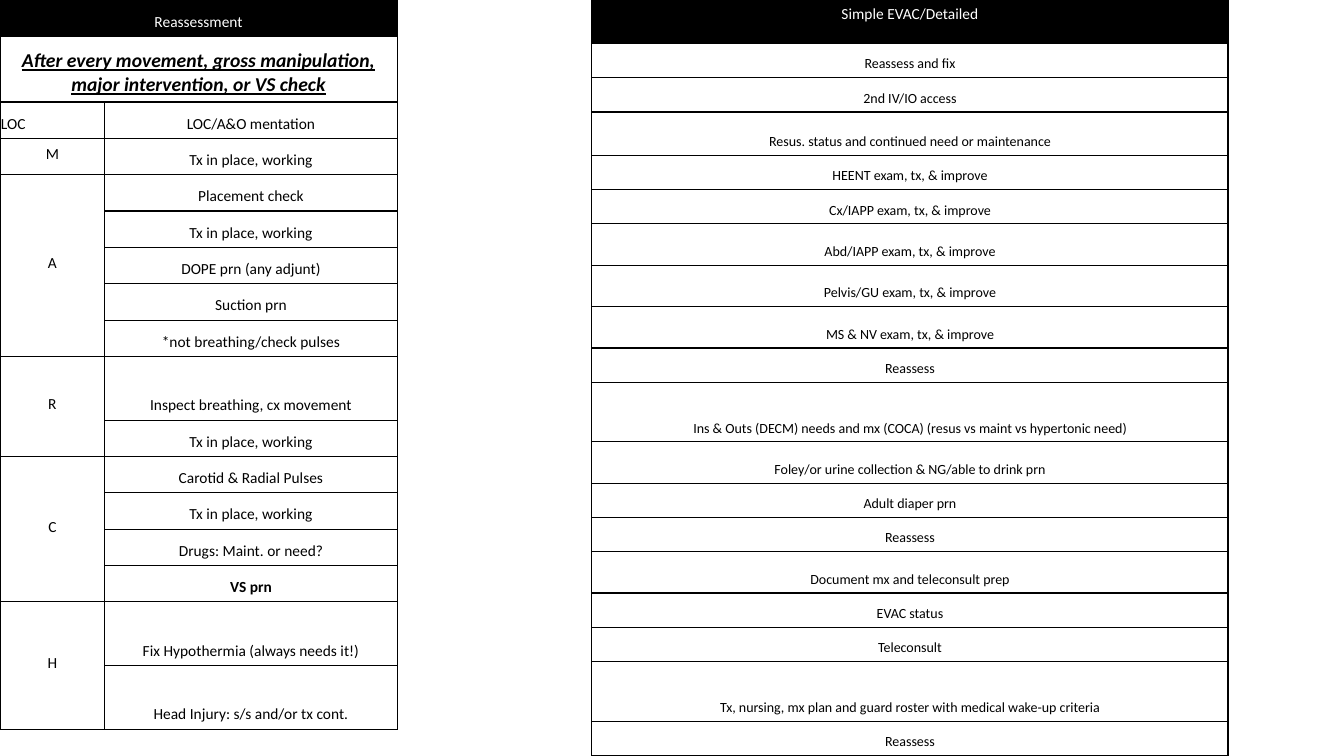
import pptx
import pptx.dml.color
import pptx.enum.text
import pptx.oxml
import pptx.oxml.ns
import pptx.util

THEME = {
    "font": "Calibri", "ink": "000000", "paper": "FFFFFF",
    "body": 11, "small": 10, "banner": 14, "border": 1,
}
ANCHOR = pptx.enum.text.MSO_ANCHOR
ALIGN = pptx.enum.text.PP_ALIGN
SLIDE_W, SLIDE_H = 13.33, 7.5

# Row heights are weights, scaled to the height of each table
ONE, BANNER, TALL = 0.36, 0.65, 0.63
reassessment = [
    (ONE, "Reassessment", ""),
    (BANNER, "After every movement, gross manipulation, major intervention, or VS check", ""),
    (ONE, "LOC", "LOC/A&O mentation"),
    (ONE, "M", "Tx in place, working"),
    (ONE, "A", "Placement check"),
    (ONE, "", "Tx in place, working"),
    (ONE, "", "DOPE prn (any adjunt)"),
    (ONE, "", "Suction prn"),
    (ONE, "", "*not breathing/check pulses"),
    (TALL, "R", "Inspect breathing, cx movement"),
    (ONE, "", "Tx in place, working"),
    (ONE, "C", "Carotid & Radial Pulses"),
    (ONE, "", "Tx in place, working"),
    (ONE, "", "Drugs: Maint. or need?"),
    (ONE, "", "VS prn"),
    (TALL, "H", "Fix Hypothermia (always needs it!)"),
    (TALL, "", "Head Injury: s/s and/or tx cont."),
]
HEAD, LOW, MID, HIGH = 0.43, 0.34, 0.41, 0.59
evacuation = [
    (HEAD, "Simple EVAC/Detailed"),
    (LOW, "Reassess and fix"),
    (LOW, "2nd IV/IO access"),
    (HEAD, "Resus. status and continued need or maintenance"),
    (LOW, "HEENT exam, tx, & improve"),
    (LOW, "Cx/IAPP exam, tx, & improve"),
    (MID, "Abd/IAPP exam, tx, & improve"),
    (MID, "Pelvis/GU exam, tx, & improve"),
    (MID, "MS & NV exam, tx, & improve"),
    (LOW, "Reassess"),
    (HIGH, "Ins & Outs (DECM) needs and mx (COCA) (resus vs maint vs hypertonic need)"),
    (MID, "Foley/or urine collection & NG/able to drink prn"),
    (LOW, "Adult diaper prn"),
    (LOW, "Reassess"),
    (MID, "Document mx and teleconsult prep"),
    (LOW, "EVAC status"),
    (LOW, "Teleconsult"),
    (HIGH, "Tx, nursing, mx plan and guard roster with medical wake-up criteria"),
    (LOW, "Reassess"),
]


def write_cell(cell, text, size=THEME["body"], color=THEME["ink"], fill=None,
               anchor=ANCHOR.BOTTOM, align=ALIGN.CENTER, insets=(0.01, 0.01, 0.01, 0.05),
               bold=False, italic=False, underline=False):
    cell.vertical_anchor = anchor
    cell.margin_left, cell.margin_top, cell.margin_right, cell.margin_bottom = map(
        pptx.util.Inches, insets)
    p = cell.text_frame.paragraphs[0]
    p.alignment = align
    r = p.runs[0] if p.runs else p.add_run()
    r.text = text
    r.font.name, r.font.size = THEME["font"], pptx.util.Pt(size)
    r.font.bold, r.font.italic, r.font.underline = bold, italic, underline
    r.font.color.rgb = pptx.dml.color.RGBColor.from_string(color)
    if fill:
        cell.fill.solid()
        cell.fill.fore_color.rgb = pptx.dml.color.RGBColor.from_string(fill)
    else:
        cell.fill.background()


def add_grid(slide, left, height, widths, weights):
    """Add a plain table at the top edge, with every cell bordered."""
    box = map(pptx.util.Inches, (left, 0, sum(widths), height))
    tbl = slide.shapes.add_table(len(weights), len(widths), *box).table
    tbl.first_row = tbl.horz_banding = False
    for col, width in zip(tbl.columns, widths):
        col.width = pptx.util.Inches(width)
    for row, weight in zip(tbl.rows, weights):
        row.height = pptx.util.Inches(height * weight / sum(weights))
    for cell in tbl.iter_cells():
        tcPr = cell._tc.get_or_add_tcPr()
        for side in ("lnL", "lnR", "lnT", "lnB"):
            tcPr.append(pptx.oxml.parse_xml(
                f'<a:{side} {pptx.oxml.ns.nsdecls("a")} w="{pptx.util.Pt(THEME["border"])}">'
                f'<a:solidFill><a:srgbClr val="{THEME["ink"]}"/></a:solidFill></a:{side}>'))
    return tbl


prs = pptx.Presentation()
prs.slide_width = pptx.util.Inches(SLIDE_W)
prs.slide_height = pptx.util.Inches(SLIDE_H)
s = prs.slides.add_slide(prs.slide_layouts[6])
header = {"color": THEME["paper"], "fill": THEME["ink"]}

# Reassessment: letters on the left, checks on the right
tbl = add_grid(s, 0, 7.24, [1.04, 2.9], [row[0] for row in reassessment])
special = {
    (0, 0): header,
    (1, 0): {"size": THEME["banner"], "bold": True, "italic": True, "underline": True},
    (2, 0): {"align": ALIGN.LEFT},
    (14, 1): {"bold": True},
}
for i, (_, letter, check) in enumerate(reassessment):
    letter_style = {"anchor": ANCHOR.MIDDLE} if i > 2 else {}
    write_cell(tbl.cell(i, 0), letter, **special.get((i, 0), letter_style))
    write_cell(tbl.cell(i, 1), check, **special.get((i, 1), {}))

# Rows without a check span both columns; each letter spans down to the next one
starts = [i for i, row in enumerate(reassessment) if row[1]] + [len(reassessment)]
for top, end in zip(starts, starts[1:]):
    last_col = 0 if reassessment[top][2] else 1
    if end - top > 1 or last_col:
        for cell in (tbl.cell(i, 0) for i in range(top + 1, end)):
            cell.text_frame.paragraphs[0].clear()
        if last_col:
            tbl.cell(top, 1).text_frame.paragraphs[0].clear()
        tbl.cell(top, 0).merge(tbl.cell(end - 1, last_col))

# Evacuation checklist
tbl = add_grid(s, 5.87, SLIDE_H, [6.31], [row[0] for row in evacuation])
for i, (_, step) in enumerate(evacuation):
    style = {"size": THEME["small"]}
    if i == 0:
        style = {**header, "anchor": ANCHOR.TOP, "insets": (0.1, 0.05, 0.1, 0.05)}
    write_cell(tbl.cell(i, 0), step, **style)

prs.save("out.pptx")
